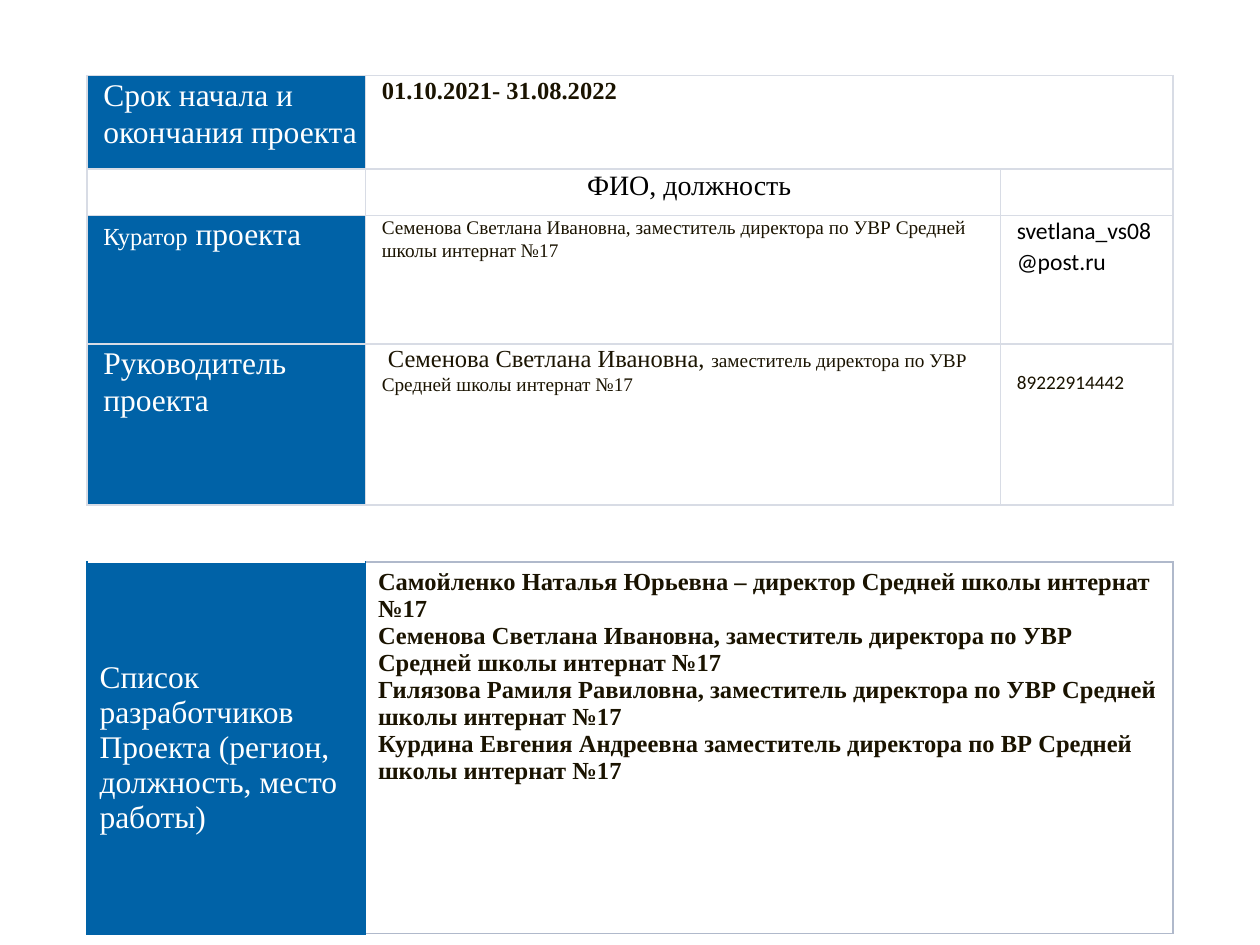
from lxml.etree import SubElement
from pptx import Presentation
from pptx.dml.color import RGBColor
from pptx.enum.text import MSO_ANCHOR, PP_ALIGN
from pptx.oxml.ns import qn
from pptx.util import Inches, Pt

BLUE = RGBColor(0x00, 0x62, 0xA7)
WHITE = RGBColor(0xFF, 0xFF, 0xFF)
BLACK = RGBColor(0x00, 0x00, 0x00)
DARK = RGBColor(0x1A, 0x13, 0x00)
PALE_GREY = RGBColor(0xD8, 0xDC, 0xE5)
GREY_BLUE = RGBColor(0xB0, 0xB9, 0xCB)

SERIF = "Times New Roman"
SANS = "Calibri"
LABEL_WIDTH = 2.21


def set_borders(cell, left, top, right, bottom):
    properties = cell._tc.get_or_add_tcPr()
    sides = zip(("a:lnL", "a:lnT", "a:lnR", "a:lnB"), (left, top, right, bottom))
    lines = dict(sides)
    for position, tag in enumerate(("a:lnL", "a:lnR", "a:lnT", "a:lnB")):
        color, width = lines[tag]
        line = SubElement(properties, qn(tag), w=str(Pt(width)))
        fill = SubElement(line, qn("a:solidFill"))
        SubElement(fill, qn("a:srgbClr"), val=str(color))
        properties.remove(line)
        properties.insert(position, line)


def fill_cell(cell, color):
    cell.fill.solid()
    cell.fill.fore_color.rgb = color


def add_run(paragraph, text, size, color, font=SERIF, bold=False):
    run = paragraph.add_run()
    run.text = text
    run.font.size = Pt(size)
    run.font.name = font
    run.font.bold = bold
    run.font.color.rgb = color


def add_plain_table(slide, box, widths, heights):
    left, top, width, height = map(Inches, box)
    shape = slide.shapes.add_table(len(heights), len(widths), left, top, width, height)
    table = shape.table
    table.first_row = False
    table.horz_banding = False
    for column, column_width in zip(table.columns, widths):
        column.width = Inches(column_width)
    for row, row_height in zip(table.rows, heights):
        row.height = Inches(row_height)
    return table


def add_contacts_table(slide, box):
    rows = [
        [
            [("Срок начала и окончания проекта", 18, WHITE)],
            [("01.10.2021- 31.08.2022", 14, DARK, SERIF, True)],
            [],
        ],
        [[], [("ФИО, должность", 16, BLACK)], []],
        [
            [("Куратор", 14, WHITE), (" проекта", 18, WHITE)],
            [("Семенова Светлана Ивановна, заместитель директора по УВР "
              "Средней школы интернат №17", 11, DARK)],
            [("svetlana_vs08@post.ru", 13.5, BLACK, SANS)],
        ],
        [
            [("Руководитель проекта", 18, WHITE)],
            [(" Семенова Светлана Ивановна, ", 14, DARK),
             ("заместитель директора по УВР Средней школы интернат №17", 11, DARK)],
            [("89222914442", 11, DARK, SANS)],
        ],
    ]
    widths = (LABEL_WIDTH, 5.04, box[2] - LABEL_WIDTH - 5.04)
    table = add_plain_table(slide, box, widths, (0.74, 0.37, 1.02, 1.28))
    table.cell(0, 1).merge(table.cell(0, 2))
    for row_index, row in enumerate(rows):
        for column_index, runs in enumerate(row):
            cell = table.cell(row_index, column_index)
            cell.margin_left = cell.margin_right = Inches(0.03)
            cell.margin_top = cell.margin_bottom = 0
            fill_cell(cell, BLUE if column_index == 0 and runs else WHITE)
            set_borders(cell, *[(PALE_GREY, 1)] * 4)
            paragraph = cell.text_frame.paragraphs[0]
            paragraph.line_spacing = 1.07
            paragraph._p.get_or_add_pPr().set("marL", str(Inches(0.1)))
            for run in runs:
                add_run(paragraph, *run)
    table.cell(1, 1).text_frame.paragraphs[0].alignment = PP_ALIGN.CENTER
    table.cell(3, 2).margin_top = Inches(0.2)


def add_developers_table(slide, box):
    label_lines = ("Список разработчиков", "Проекта (регион, должность, место работы)")
    developers = (
        "Самойленко Наталья Юрьевна – директор Средней школы интернат №17",
        "Семенова Светлана Ивановна, заместитель директора по УВР Средней школы интернат №17",
        "Гилязова Рамиля Равиловна, заместитель директора по УВР Средней школы интернат №17",
        "Курдина Евгения Андреевна заместитель директора по ВР Средней школы интернат №17",
    )
    table = add_plain_table(slide, box, (LABEL_WIDTH, box[2] - LABEL_WIDTH), (box[3],))
    label, names = table.cell(0, 0), table.cell(0, 1)
    label.vertical_anchor = MSO_ANCHOR.MIDDLE
    fill_cell(label, BLUE)
    fill_cell(names, WHITE)
    set_borders(label, (BLUE, 1.5), (WHITE, 1.5), (BLUE, 1), (BLUE, 1.5))
    set_borders(names, (BLUE, 1), *[(GREY_BLUE, 1)] * 3)
    for cell, lines, size, color, bold in (
        (label, label_lines, 18, WHITE, False),
        (names, developers, 14, DARK, True),
    ):
        frame = cell.text_frame
        for index, line in enumerate(lines):
            paragraph = frame.add_paragraph() if index else frame.paragraphs[0]
            add_run(paragraph, line, size, color, bold=bold)


def main():
    presentation = Presentation()
    presentation.slide_width = Inches(10)
    presentation.slide_height = Inches(7.5)
    slide = presentation.slides.add_slide(presentation.slide_layouts[6])
    add_contacts_table(slide, (0.69, 0.6, 8.62, 3.4))
    add_developers_table(slide, (0.69, 4.46, 8.62, 2.95))
    presentation.save("out.pptx")


if __name__ == "__main__":
    main()
